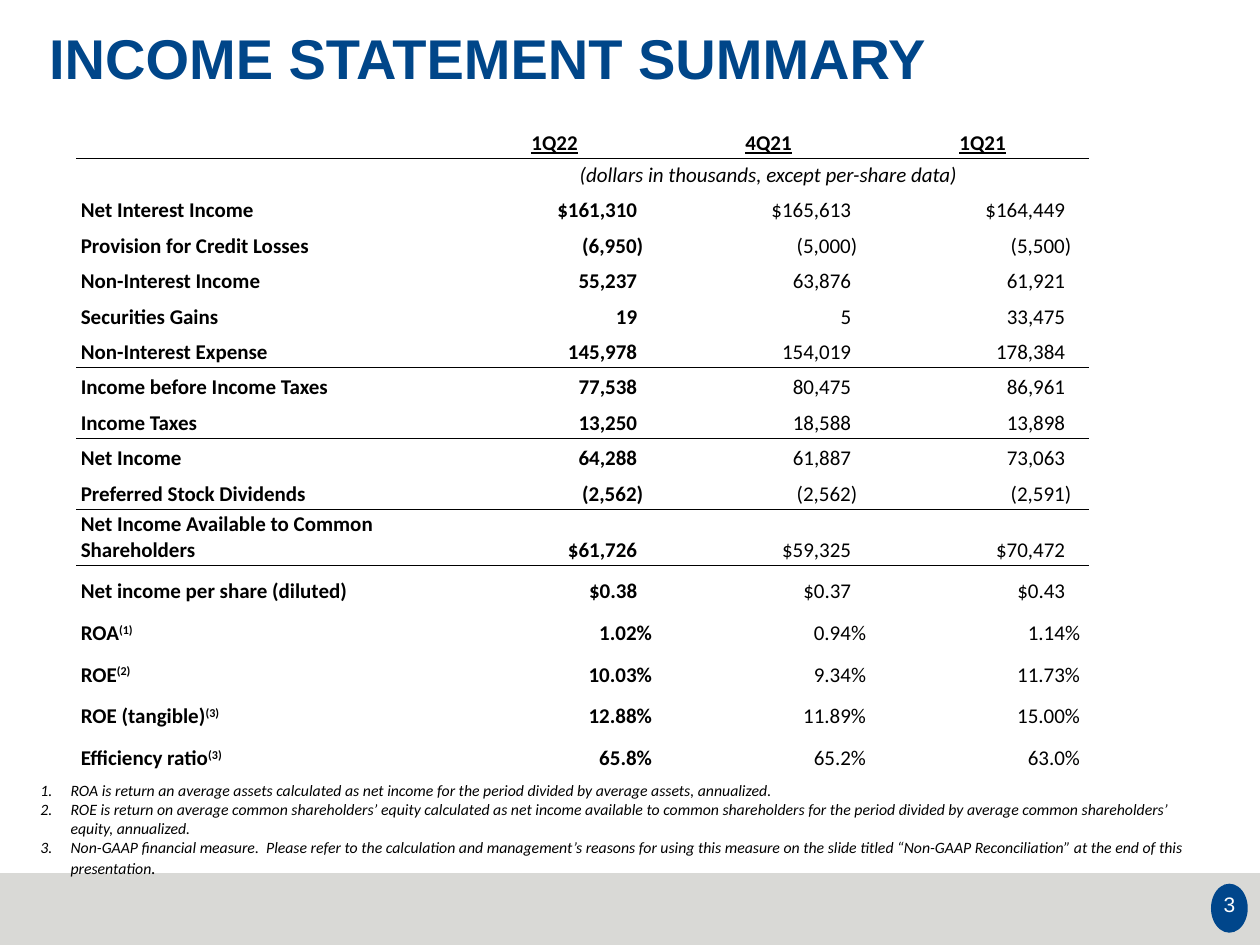
from lxml import etree
from pptx import Presentation
from pptx import util as u
from pptx.dml import color
from pptx.enum import shapes, text
from pptx.oxml import ns

Pt = u.Pt
NAVY, GREY, BLACK, WHITE = "004689", "D9D9D6", "000000", "FFFFFF"

HEADINGS = ["1Q22", "4Q21", "1Q21"]
UNITS = "(dollars in thousands, except per-share data)"
# Label, superscript note mark, one value per quarter
RESULTS = [
    ("Net Interest Income", "", "$161,310", "$165,613", "$164,449"),
    ("Provision for Credit Losses", "", "(6,950)", "(5,000)", "(5,500)"),
    ("Non-Interest Income", "", "55,237", "63,876", "61,921"),
    ("Securities Gains", "", "19", "5", "33,475"),
    ("Non-Interest Expense", "", "145,978", "154,019", "178,384"),
    ("Income before Income Taxes", "", "77,538", "80,475", "86,961"),
    ("Income Taxes", "", "13,250", "18,588", "13,898"),
    ("Net Income", "", "64,288", "61,887", "73,063"),
    ("Preferred Stock Dividends", "", "(2,562)", "(2,562)", "(2,591)"),
    ("Net Income Available to Common Shareholders", "", "$61,726", "$59,325", "$70,472"),
    ("Net income per share (diluted)", "", "$0.38", "$0.37", "$0.43"),
    ("ROA", "(1)", "1.02%", "0.94%", "1.14%"),
    ("ROE", "(2)", "10.03%", "9.34%", "11.73%"),
    ("ROE (tangible)", "(3)", "12.88%", "11.89%", "15.00%"),
    ("Efficiency ratio", "(3)", "65.8%", "65.2%", "63.0%"),
]
FIRST_RESULT = 3
RULED_ROWS = [1, 7, 9, 11, 12]  # rows with a black line below
ROW_HEIGHTS = [18] * 3 + [20.27] * 9 + [32] + [23.8] * 5
COLUMN_WIDTHS = [211] + [122.3] * 3
# Right margins that line the digits up above each other
VALUE_MARGINS = {")": 9.7, "%": 4.7}
DIGIT_MARGIN = 13.2

FOOTNOTES = [
    "ROA is return an average assets calculated as net income for the period divided by "
    "average assets, annualized.",
    "ROE is return on average common shareholders’ equity calculated as net income available "
    "to common shareholders for the period divided by average common shareholders’ equity, "
    "annualized.",
    "Non-GAAP financial measure.  Please refer to the calculation and management’s reasons for "
    "using this measure on the slide titled “Non-GAAP Reconciliation” at the end of this "
    "presentation",
]


def rgb(value):
    return color.RGBColor.from_string(value)


def style(para, size, name, ink, bold=False, italic=False):
    font = para.font
    font.size, font.name, font.bold, font.italic = Pt(size), name, bold, italic
    font.color.rgb = rgb(ink)


def add_plain_shape(page, kind, area, fill):
    shape = page.shapes.add_shape(kind, *map(Pt, area))
    shape.shadow.inherit = False
    shape.fill.solid()
    shape.fill.fore_color.rgb = rgb(fill)
    shape.line.fill.background()


def add_text_frame(page, area):
    frame = page.shapes.add_textbox(*map(Pt, area)).text_frame
    frame.word_wrap = True
    frame.margin_left = frame.margin_right = frame.margin_bottom = Pt(7.2)
    frame.margin_top = Pt(4.32)
    return frame


def add_title(page, area):
    para = add_text_frame(page, area).paragraphs[0]
    para.text = "INCOME STATEMENT SUMMARY"
    para.line_spacing = 0.9
    style(para, 32, "Arial", NAVY, bold=True)


def add_footer(page, area):
    left, top, width, height = area
    add_plain_shape(page, shapes.MSO_SHAPE.RECTANGLE, area, GREY)
    badge_left = left + width - 28
    add_plain_shape(page, shapes.MSO_SHAPE.OVAL, (badge_left, top + 6, 21, 28), "00468B")
    frame = add_text_frame(page, (badge_left - 6.5, top + 5, 34, 28))
    frame.vertical_anchor = text.MSO_ANCHOR.MIDDLE
    para = frame.paragraphs[0]
    para.text = "3"
    para.alignment = text.PP_ALIGN.CENTER
    style(para, 12, "Arial", WHITE)


def add_footnotes(page, area):
    frame = add_text_frame(page, area)
    for number, note in enumerate(FOOTNOTES, 1):
        para = frame.paragraphs[0] if number == 1 else frame.add_paragraph()
        para.add_run().text = note
        properties = para._p.get_or_add_pPr()
        properties.set("marL", str(Pt(17.3)))
        properties.set("indent", str(-Pt(17.3)))
        etree.SubElement(properties, ns.qn("a:buAutoNum"), type="arabicPeriod", startAt=str(number))
        style(para, 9, "Calibri", BLACK, italic=True)
    stop = para.add_run()
    stop.text = "."
    stop.font.size = Pt(10)


def rule_cell(cell, side):
    line = etree.SubElement(cell._tc.get_or_add_tcPr(), ns.qn("a:" + side), w=str(Pt(1)))
    fill = etree.SubElement(line, ns.qn("a:solidFill"))
    etree.SubElement(fill, ns.qn("a:srgbClr"), val=BLACK)


def prepare_cell(cell, row):
    if row - 1 in RULED_ROWS:
        rule_cell(cell, "lnT")
    if row in RULED_ROWS:
        rule_cell(cell, "lnB")
    cell.fill.solid()
    cell.fill.fore_color.rgb = rgb(WHITE)
    cell.margin_left, cell.margin_right = Pt(2.2), Pt(0.7)
    cell.margin_top, cell.margin_bottom = Pt(0), Pt(1.4)
    cell.vertical_anchor = text.MSO_ANCHOR.BOTTOM
    # Keeps empty cells from stretching their row
    cell.text_frame.paragraphs[0]._p.get_or_add_endParaRPr().set("sz", "1200")


def write_cell(cell, words, align, bold=False, italic=False, mark=""):
    para = cell.text_frame.paragraphs[0]
    para.add_run().text = words
    para.alignment = align
    para.line_spacing = 1.0
    style(para, 12, "Calibri", BLACK, bold, italic)
    if mark:
        span = para.add_run()
        span.text = mark
        span._r.get_or_add_rPr().set("baseline", "30000")
    return para


def add_income_table(page, area):
    table = page.shapes.add_table(len(ROW_HEIGHTS), len(COLUMN_WIDTHS), *map(Pt, area)).table
    table.first_row = table.horz_banding = False
    for column, width in zip(table.columns, COLUMN_WIDTHS):
        column.width = Pt(width)
    for row, height in enumerate(ROW_HEIGHTS):
        table.rows[row].height = Pt(height)
        for column in range(len(COLUMN_WIDTHS)):
            prepare_cell(table.cell(row, column), row)
    table.cell(0, 2).merge(table.cell(0, 3))
    table.cell(2, 1).merge(table.cell(2, 3))

    # Quarter headings and units
    center, right = text.PP_ALIGN.CENTER, text.PP_ALIGN.RIGHT
    for column, heading in enumerate(HEADINGS, 1):
        write_cell(table.cell(1, column), heading, center, bold=True).font.underline = True
    write_cell(table.cell(2, 1), UNITS, center, italic=True)

    # Results, with the latest quarter in bold
    for row, (label, mark, *values) in enumerate(RESULTS, FIRST_RESULT):
        write_cell(table.cell(row, 0), label, text.PP_ALIGN.LEFT, bold=True, mark=mark)
        for column, value in enumerate(values, 1):
            cell = table.cell(row, column)
            cell.margin_right = Pt(VALUE_MARGINS.get(value[-1], DIGIT_MARGIN))
            write_cell(cell, value, right, bold=column == 1)


def main():
    deck = Presentation()
    deck.slide_width, deck.slide_height = Pt(720), Pt(540)
    page = deck.slides.add_slide(deck.slide_layouts[6])
    add_footer(page, (0, 499, 720, 41))
    add_footnotes(page, (16, 442, 670, 62))
    add_title(page, (21, 13.7, 691, 82))
    add_income_table(page, (44, 54.7, sum(COLUMN_WIDTHS), sum(ROW_HEIGHTS)))
    deck.save("out.pptx")


if __name__ == "__main__":
    main()
